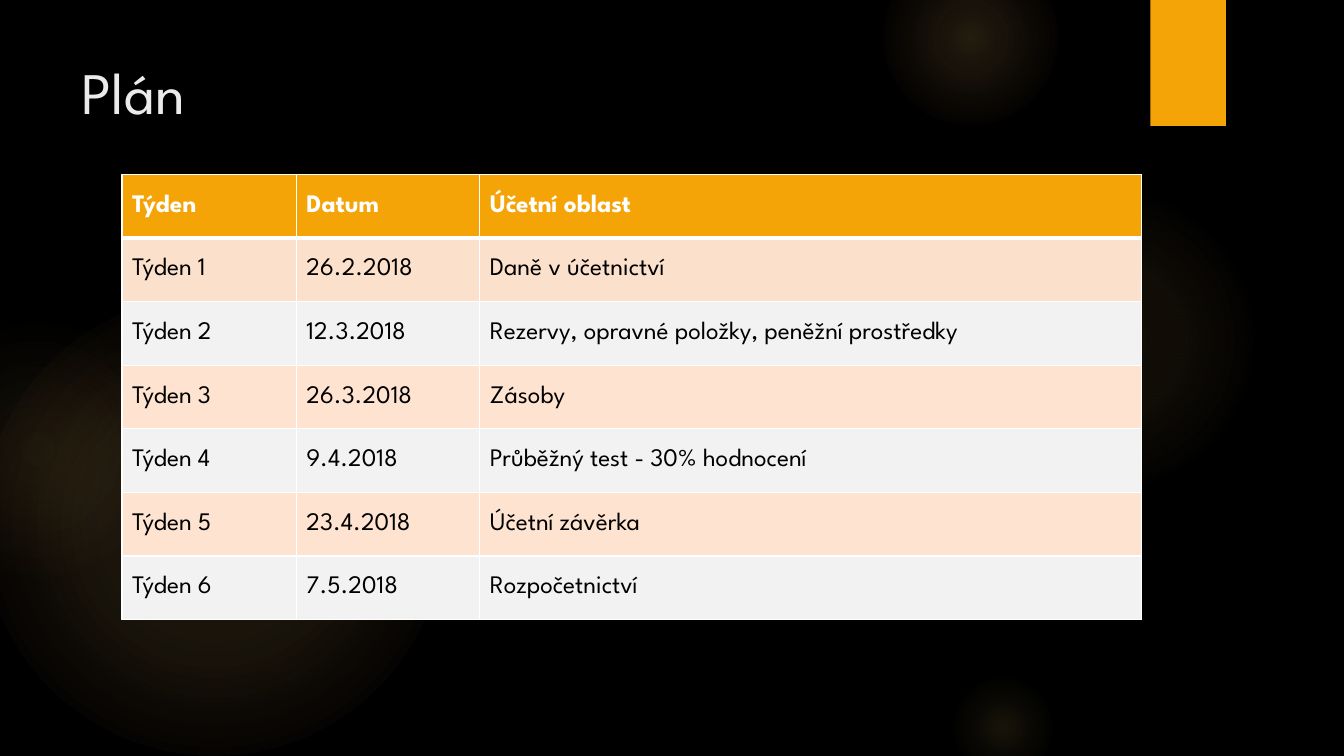
from lxml import etree
from pptx import Presentation
from pptx.dml.color import RGBColor
from pptx.enum.shapes import MSO_SHAPE as Shape
from pptx.enum.text import MSO_ANCHOR as Anchor
from pptx.oxml import parse_xml
from pptx.oxml.ns import nsdecls, qn
from pptx.util import Inches, Pt

FONT = "League Spartan"
GOLD, WHITE, BLACK = "F5A408", "FFFFFF", "000000"
GLOW = "FAC96A"
TITLE = "Plán"
PLAN = [
    ("Týden", "Datum", "Účetní oblast"),
    ("Týden 1", "26.2.2018", "Daně v účetnictví"),
    ("Týden 2", "12.3.2018", "Rezervy, opravné položky, peněžní prostředky"),
    ("Týden 3", "26.3.2018", "Zásoby"),
    ("Týden 4", "9.4.2018", "Průběžný test - 30% hodnocení"),
    ("Týden 5", "23.4.2018", "Účetní závěrka"),
    ("Týden 6", "7.5.2018", "Rozpočetnictví"),
]
ROW_FILLS = [GOLD, "FBE0CC", "F2F2F2", "FEE3D1", "F2F2F2", "FEE3D1", "F2F2F2"]
COLUMN_WIDTHS = [1.73, 1.82, 6.56]
TABLE_LEFT, TABLE_TOP, TABLE_HEIGHT = 1.21, 1.73, 4.42
GLOWS = [
    (-0.17, 2.92, 4.58, [(0, GLOW, 11), (36, GLOW, 10), (75, GLOW, 0)]),
    (-0.92, 3.17, 2.58, [(0, GLOW, 8), (36, GLOW, 5), (71, "F59B74", 0)]),
    (9.41, 1.83, 3.08, [(0, GLOW, 7), (36, GLOW, 6), (69, GLOW, 0)]),
    (8.75, -0.5, 1.75, [(0, GLOW, 14), (36, GLOW, 7), (73, GLOW, 0)]),
    (9.41, 6.67, 1.08, [(0, GLOW, 10), (31, GLOW, 5), (66, GLOW, 0)]),
]


def color(value):
    return RGBColor.from_string(value)


def paint(fill, value):
    fill.solid()
    fill.fore_color.rgb = color(value)


def style(paragraph, size, value, bold=False):
    font = paragraph.font
    font.name, font.size, font.bold = FONT, Pt(size), bold
    font.color.rgb = color(value)


def add_block(slide, kind, left, top, width, height):
    shape = slide.shapes.add_shape(
        kind, Inches(left), Inches(top), Inches(width), Inches(height))
    shape.shadow.inherit = False
    shape.line.fill.background()
    return shape


def add_glow(slide, left, top, size, stops):
    shape = add_block(slide, Shape.OVAL, left, top, size, size)
    stop_xml = "".join(
        f'<a:gs pos="{position * 1000}"><a:srgbClr val="{value}">'
        f'<a:alpha val="{alpha * 1000}"/></a:srgbClr></a:gs>'
        for position, value, alpha in stops)
    gradient = parse_xml(
        f'<a:gradFill {nsdecls("a")} rotWithShape="1"><a:gsLst>{stop_xml}</a:gsLst>'
        '<a:path path="circle"><a:fillToRect l="50000" t="50000" r="50000" b="50000"/>'
        '</a:path></a:gradFill>')
    shape._element.spPr.find(qn("a:prstGeom")).addnext(gradient)


def add_shadow(shape):
    effects = shape._element.spPr.find(qn("a:effectLst"))
    effects.append(parse_xml(
        f'<a:outerShdw {nsdecls("a")} blurRad="{Pt(3)}" dist="{Pt(2)}" dir="5400000" '
        f'rotWithShape="0"><a:srgbClr val="{BLACK}"><a:alpha val="45000"/>'
        '</a:srgbClr></a:outerShdw>'))


def set_borders(cell, widths):
    properties = cell._tc.get_or_add_tcPr()
    for index, (side, width) in enumerate(widths.items()):
        border = etree.Element(qn(f"a:ln{side}"), w=str(Pt(width)))
        fill = etree.SubElement(border, qn("a:solidFill"))
        etree.SubElement(fill, qn("a:srgbClr"), val=WHITE)
        properties.insert(index, border)


def add_title(slide):
    box = slide.shapes.add_textbox(
        Inches(0.71), Inches(0.5), Inches(10.29), Inches(1.53))
    box.text_frame.word_wrap = True
    box.text_frame.text = TITLE
    style(box.text_frame.paragraphs[0], 42, "EBEBEB")


def add_plan(slide):
    table = slide.shapes.add_table(
        len(PLAN), len(COLUMN_WIDTHS), Inches(TABLE_LEFT), Inches(TABLE_TOP),
        Inches(sum(COLUMN_WIDTHS)), Inches(TABLE_HEIGHT)).table
    for column, width in zip(table.columns, COLUMN_WIDTHS):
        column.width = Inches(width)
    for row_index, (row, texts) in enumerate(zip(table.rows, PLAN)):
        header = row_index == 0
        row.height = Inches(TABLE_HEIGHT / len(PLAN))
        borders = {"L": 1, "R": 1, "T": 3 if row_index == 1 else 1,
                   "B": 3 if header else 1}
        for cell, text in zip(row.cells, texts):
            cell.text = text
            cell.vertical_anchor = Anchor.MIDDLE
            paint(cell.fill, ROW_FILLS[row_index])
            set_borders(cell, borders)
            style(cell.text_frame.paragraphs[0], 18, WHITE if header else BLACK, header)


def main():
    presentation = Presentation()
    presentation.slide_width = Inches(13.33)
    presentation.slide_height = Inches(7.5)
    slide = presentation.slides.add_slide(presentation.slide_layouts[6])
    paint(slide.background.fill, BLACK)
    for glow in GLOWS:
        add_glow(slide, *glow)
    ribbon = add_block(slide, Shape.RECTANGLE, 11.41, 0, 0.75, 1.25)
    paint(ribbon.fill, GOLD)
    add_shadow(ribbon)
    add_title(slide)
    add_plan(slide)
    presentation.save("out.pptx")


if __name__ == "__main__":
    main()
